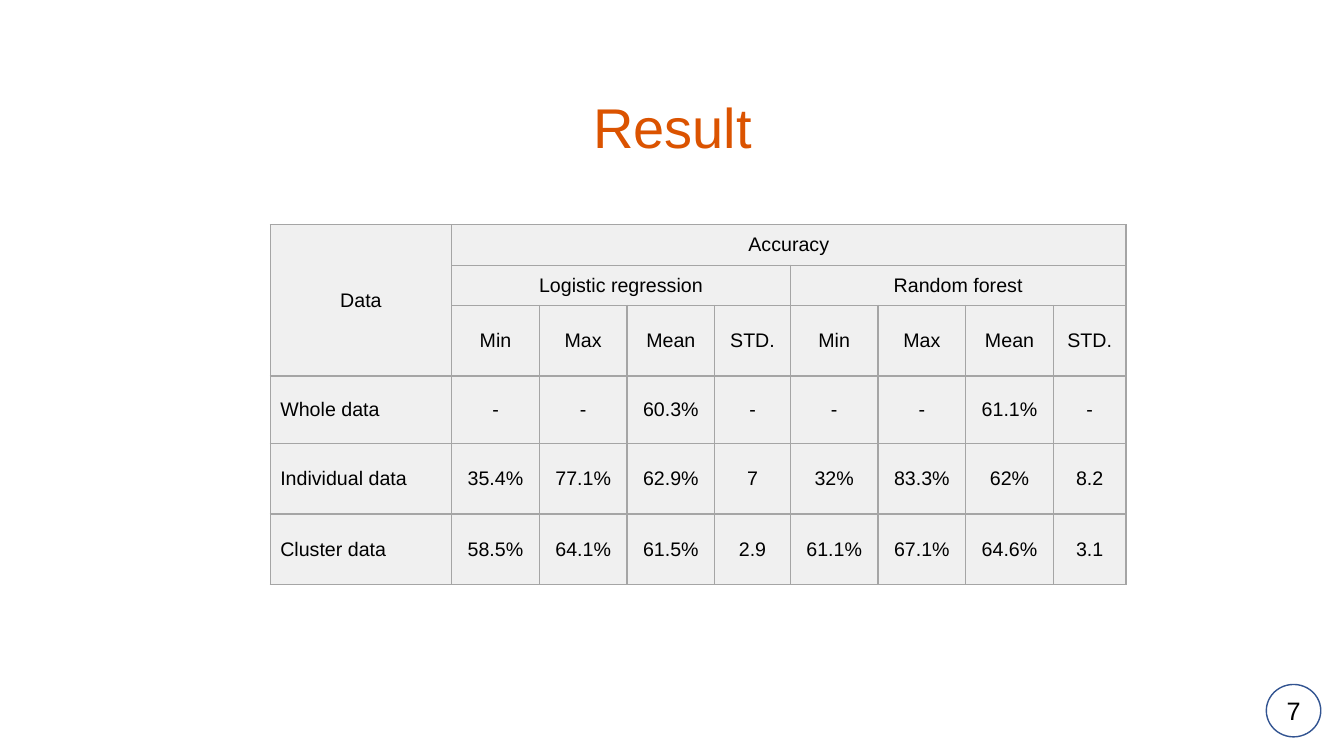
import dataclasses

import lxml.etree
import pptx
import pptx.dml.color
import pptx.enum.shapes
import pptx.enum.text
import pptx.oxml.ns
import pptx.util

ALIGN = pptx.enum.text.PP_ALIGN
ANCHOR = pptx.enum.text.MSO_ANCHOR

GRID_COLUMNS, GRID_ROWS = 13.33, 7.5
GRID_UNIT = pptx.util.Inches(1)


@dataclasses.dataclass(frozen=True)
class Theme:
    font: str = "Arial"
    text: str = "000000"
    title: str = "DB5300"
    cell: str = "F0F0F0"
    border: str = "A5A5A5"
    badge_fill: str = "FFFFFF"
    badge_line: str = "325491"
    title_size: float = 40
    badge_size: float = 18
    table_size: float = 14
    title_spacing: float = 68.3
    line_width: float = 1


THEME = Theme()

COLUMN_WIDTHS = [1.8] + [0.87] * 3 + [0.75] + [0.87] * 3 + [0.72]
ROW_HEIGHTS = [0.4, 0.4, 0.7, 0.67, 0.7, 0.7]
MODELS = ["Logistic regression", "Random forest"]
MEASURES = ["Min", "Max", "Mean", "STD."]
RESULTS = [
    ["Whole data", "-", "-", "60.3%", "-", "-", "-", "61.1%", "-"],
    ["Individual data", "35.4%", "77.1%", "62.9%", "7", "32%", "83.3%", "62%", "8.2"],
    ["Cluster data", "58.5%", "64.1%", "61.5%", "2.9", "61.1%", "67.1%", "64.6%", "3.1"],
]


def grid(*units):
    return [round(unit * GRID_UNIT) for unit in units]


def rgb(colour):
    return pptx.dml.color.RGBColor.from_string(colour)


def write_text(frame, text, *, size, colour=THEME.text, align=ALIGN.CENTER, spacing=None):
    paragraph = frame.paragraphs[0]
    paragraph.alignment = align
    if spacing:
        paragraph.line_spacing = pptx.util.Pt(spacing)
    run = paragraph.add_run()
    run.text = text
    run.font.name = THEME.font
    run.font.size = pptx.util.Pt(size)
    run.font.color.rgb = rgb(colour)


def add_title(slide, text):
    frame = slide.shapes.add_textbox(*grid(5.71, 0.56, 1.92, 0.94)).text_frame
    frame.word_wrap = False
    frame.auto_size = pptx.enum.text.MSO_AUTO_SIZE.SHAPE_TO_FIT_TEXT
    frame.margin_left, frame.margin_right = grid(0.17, 0.17)
    frame.margin_top, frame.margin_bottom = grid(0.08, 0)
    write_text(frame, text, size=THEME.title_size, colour=THEME.title,
               spacing=THEME.title_spacing)


def add_page_badge(slide, number):
    badge = slide.shapes.add_shape(
        pptx.enum.shapes.MSO_SHAPE.OVAL, *grid(12.56, 6.79, 0.54, 0.52))
    badge.shadow.inherit = False
    badge.fill.solid()
    badge.fill.fore_color.rgb = rgb(THEME.badge_fill)
    badge.line.color.rgb = rgb(THEME.badge_line)
    badge.line.width = pptx.util.Pt(THEME.line_width)
    frame = badge.text_frame
    frame.word_wrap = False
    frame.vertical_anchor = ANCHOR.MIDDLE
    frame.margin_left = frame.margin_right = 0
    write_text(frame, number, size=THEME.badge_size)


def style_cell(cell):
    """Draw the four borders, then the fill, which must follow them in the XML."""
    properties = cell._tc.get_or_add_tcPr()
    qualified = pptx.oxml.ns.qn
    for side in ("a:lnL", "a:lnR", "a:lnT", "a:lnB"):
        border = lxml.etree.SubElement(
            properties, qualified(side), w=str(pptx.util.Pt(THEME.line_width)))
        fill = lxml.etree.SubElement(border, qualified("a:solidFill"))
        lxml.etree.SubElement(fill, qualified("a:srgbClr"), val=THEME.border)
    cell.fill.solid()
    cell.fill.fore_color.rgb = rgb(THEME.cell)
    cell.vertical_anchor = ANCHOR.MIDDLE


def fill_cell(table, row, column, text, align=ALIGN.CENTER, rows=1, columns=1):
    cell = table.cell(row, column)
    if rows > 1 or columns > 1:
        cell.merge(table.cell(row + rows - 1, column + columns - 1))
    write_text(cell.text_frame, text, size=THEME.table_size, align=align)


def add_result_table(slide):
    table = slide.shapes.add_table(
        len(ROW_HEIGHTS), len(COLUMN_WIDTHS),
        *grid(2.68, 2.23, sum(COLUMN_WIDTHS), sum(ROW_HEIGHTS))).table
    table.first_row = table.horz_banding = False
    for column, width in zip(table.columns, grid(*COLUMN_WIDTHS)):
        column.width = width
    for row, height in zip(table.rows, grid(*ROW_HEIGHTS)):
        row.height = height
    for cell in table.iter_cells():
        style_cell(cell)

    span = len(MEASURES)
    fill_cell(table, 0, 0, "Data", rows=3)
    fill_cell(table, 0, 1, "Accuracy", columns=span * len(MODELS))
    for index, model in enumerate(MODELS):
        fill_cell(table, 1, 1 + index * span, model, columns=span)
    for column, measure in enumerate(MEASURES * len(MODELS), start=1):
        fill_cell(table, 2, column, measure)
    for row, values in enumerate(RESULTS, start=3):
        for column, value in enumerate(values):
            fill_cell(table, row, column, value,
                      align=ALIGN.CENTER if column else ALIGN.LEFT)


def main():
    presentation = pptx.Presentation()
    presentation.slide_width, presentation.slide_height = grid(GRID_COLUMNS, GRID_ROWS)
    slide = presentation.slides.add_slide(presentation.slide_layouts[6])
    add_page_badge(slide, "7")
    add_title(slide, "Result")
    add_result_table(slide)
    presentation.save("out.pptx")


if __name__ == "__main__":
    main()
